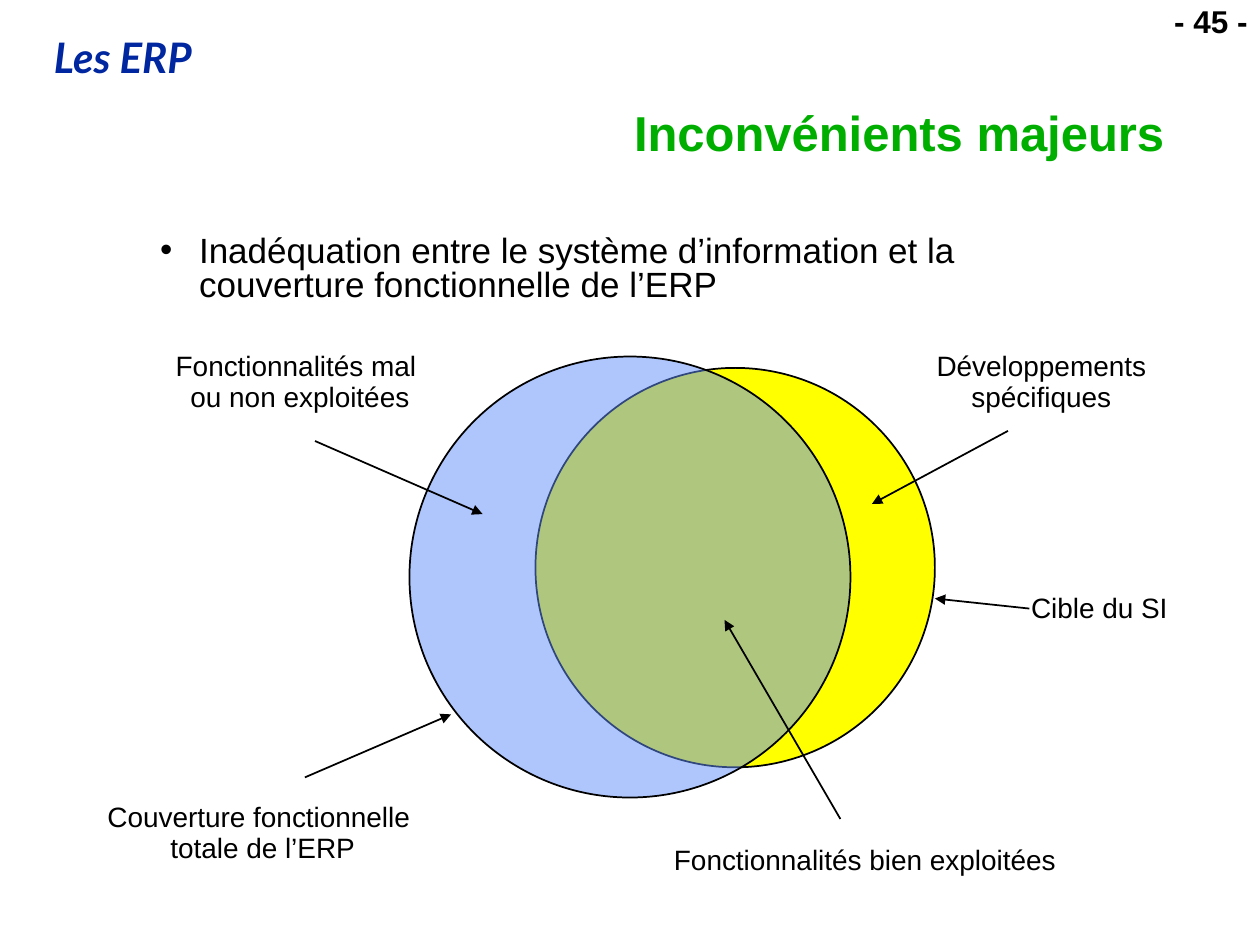
from typing import NamedTuple

from lxml import etree
from pptx import Presentation
from pptx.dml import color
from pptx.enum import shapes, text
from pptx.oxml import ns
from pptx.util import Inches, Pt

BLACK = "000000"
LEFT, CENTER, RIGHT = text.PP_ALIGN.LEFT, text.PP_ALIGN.CENTER, text.PP_ALIGN.RIGHT


class Circle(NamedTuple):
    left: float
    top: float
    diameter: float
    fill: str
    opacity: int


class Label(NamedTuple):
    wording: str
    left: float
    top: float
    width: float
    height: float


class Arrow(NamedTuple):
    start: tuple[float, float]
    end: tuple[float, float]


CIRCLES = [
    Circle(4.25, 2.92, 3.17, "FFFF00", 100),
    Circle(3.25, 2.83, 3.5, "618FFD", 50),
]
LABELS = [
    Label("Cible du SI", 8.08, 4.67, 1.29, 0.34),
    Label("Couverture fonctionnelle \ntotale de l’ERP", 0.75, 6.33, 2.67, 0.58),
    Label("Fonctionnalités mal \nou non exploitées", 1.29, 2.75, 2.18, 0.58),
    Label("Développements\nspécifiques", 7.33, 2.75, 1.87, 0.58),
    Label("Fonctionnalités bien exploitées", 5.25, 6.67, 3.23, 0.34),
]
ARROWS = [
    Arrow((2.5, 3.5), (3.83, 4.08)),
    Arrow((2.42, 6.17), (3.58, 5.67)),
    Arrow((6.67, 6.5), (5.75, 4.92)),
    Arrow((8, 3.42), (6.92, 4)),
    Arrow((8.17, 4.83), (7.42, 4.75)),
]


def rgb(value: str) -> color.RGBColor:
    return color.RGBColor.from_string(value)


def add_xml(parent, tag: str, **attributes: str):
    return etree.SubElement(parent, ns.qn(tag), attributes)


def write(box, wording: str, *, size: float, font: str = "Arial", fill: str = BLACK,
          bold: bool = False, italic: bool = False, align=LEFT, spacing: float = 0.9,
          wrap: bool = True, anchor=text.MSO_ANCHOR.TOP):
    """Fill a box with one formatted paragraph and return the paragraph."""
    frame = box.text_frame
    frame.auto_size = text.MSO_AUTO_SIZE.NONE
    frame.word_wrap = wrap
    frame.vertical_anchor = anchor
    para = frame.paragraphs[0]
    para.text = wording
    para.alignment = align
    para.line_spacing = spacing
    para.space_before = Pt(0)
    for span in para.runs:
        span.font.name = font
        span.font.size = Pt(size)
        span.font.bold = bold
        span.font.italic = italic
        span.font.color.rgb = rgb(fill)
    return para


def place(box, left: float, top: float, width: float, height: float) -> None:
    box.left, box.top = Inches(left), Inches(top)
    box.width, box.height = Inches(width), Inches(height)


def add_text(page, wording: str, left: float, top: float, width: float, height: float,
             **style) -> None:
    box = page.shapes.add_textbox(*map(Inches, (left, top, width, height)))
    write(box, wording, **style)


def set_bullet(para) -> None:
    properties = para._p.get_or_add_pPr()
    properties.set("marL", str(Inches(0.31)))
    properties.set("indent", str(-Inches(0.31)))
    add_xml(properties, "a:buFont", typeface="Arial")
    add_xml(properties, "a:buChar", char="•")


def add_circle(page, circle: Circle) -> None:
    shape = page.shapes.add_shape(
        shapes.MSO_SHAPE.OVAL, Inches(circle.left), Inches(circle.top),
        Inches(circle.diameter), Inches(circle.diameter))
    shape.shadow.inherit = False
    shape.fill.solid()
    shape.fill.fore_color.rgb = rgb(circle.fill)
    if circle.opacity < 100:
        tint = shape._element.spPr.find(ns.qn("a:solidFill"))[0]
        add_xml(tint, "a:alpha", val=str(circle.opacity * 1000))
    shape.line.color.rgb = rgb(BLACK)
    shape.line.width = Pt(1)


def add_arrow(page, arrow: Arrow) -> None:
    line = page.shapes.add_connector(
        shapes.MSO_CONNECTOR.STRAIGHT, *map(Inches, arrow.start + arrow.end))
    line.line.color.rgb = rgb(BLACK)
    line.line.width = Pt(1)
    add_xml(line.line._get_or_add_ln(), "a:tailEnd", type="triangle")
    add_xml(line._element.spPr, "a:effectLst")


def main() -> None:
    deck = Presentation()
    deck.slide_width, deck.slide_height = Inches(10), Inches(7.5)
    page = deck.slides.add_slide(deck.slide_layouts[1])

    title, body = page.shapes.title, page.placeholders[1]
    place(title, 1.42, 0.83, 7.92, 0.5)
    write(title, "Inconvénients majeurs", size=28, fill="00AE00", bold=True,
          align=RIGHT, anchor=text.MSO_ANCHOR.MIDDLE)
    place(body, 1.17, 1.83, 7.83, 0.5)
    set_bullet(write(
        body, "Inadéquation entre le système d’information et la "
        "couverture fonctionnelle de l’ERP", size=20, spacing=0.8))

    add_text(page, "Les ERP", 0.33, 0.25, 8.08, 0.46, size=24, font="Lato",
             fill="00279F", bold=True, italic=True)
    add_text(page, "- 45 -", 9.09, 0, 0.91, 0.37, size=18, bold=True, align=RIGHT)

    for circle in CIRCLES:
        add_circle(page, circle)
    for label in LABELS:
        add_text(page, *label, size=16, align=CENTER, wrap=False)
    for arrow in ARROWS:
        add_arrow(page, arrow)

    deck.save("out.pptx")


if __name__ == "__main__":
    main()
